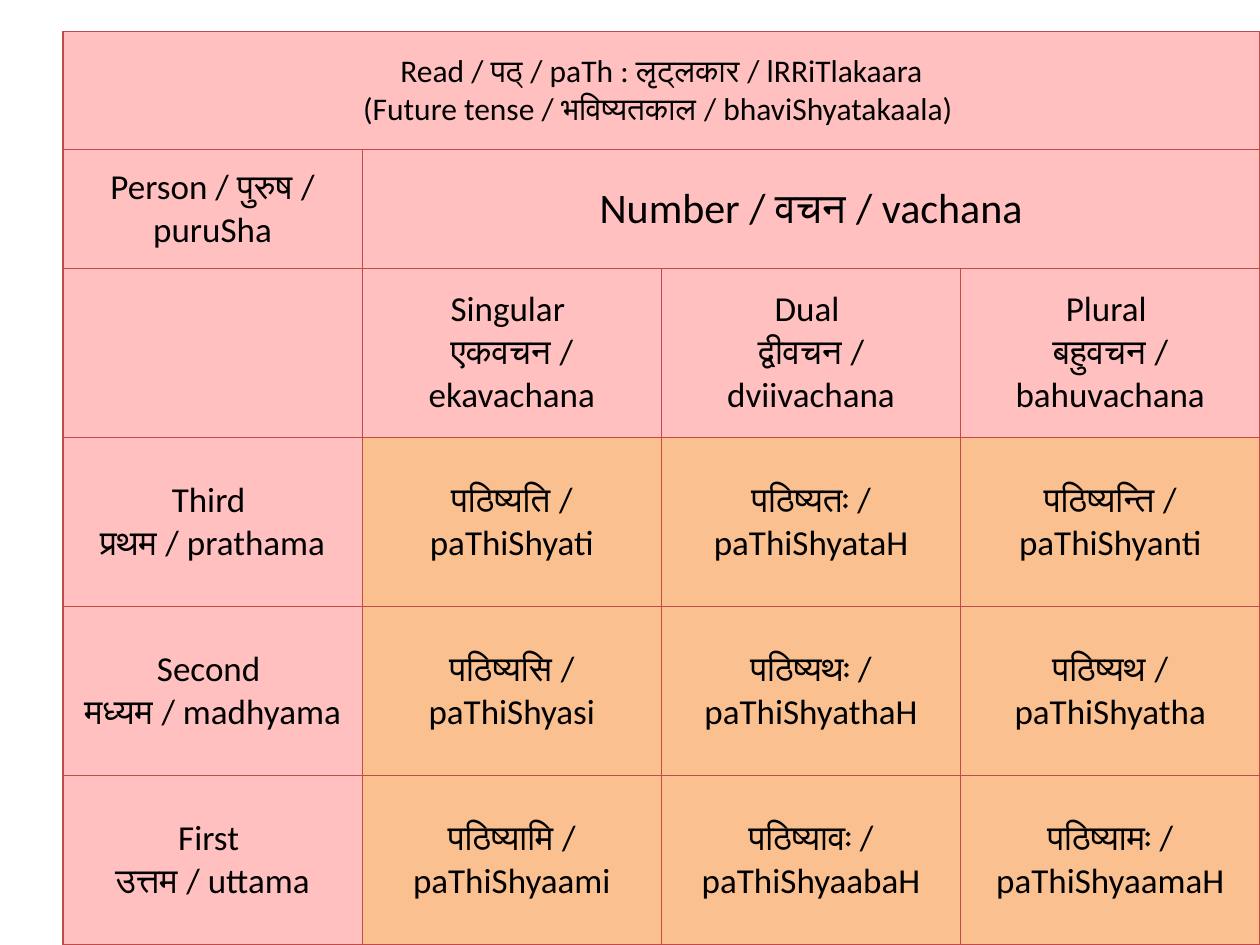
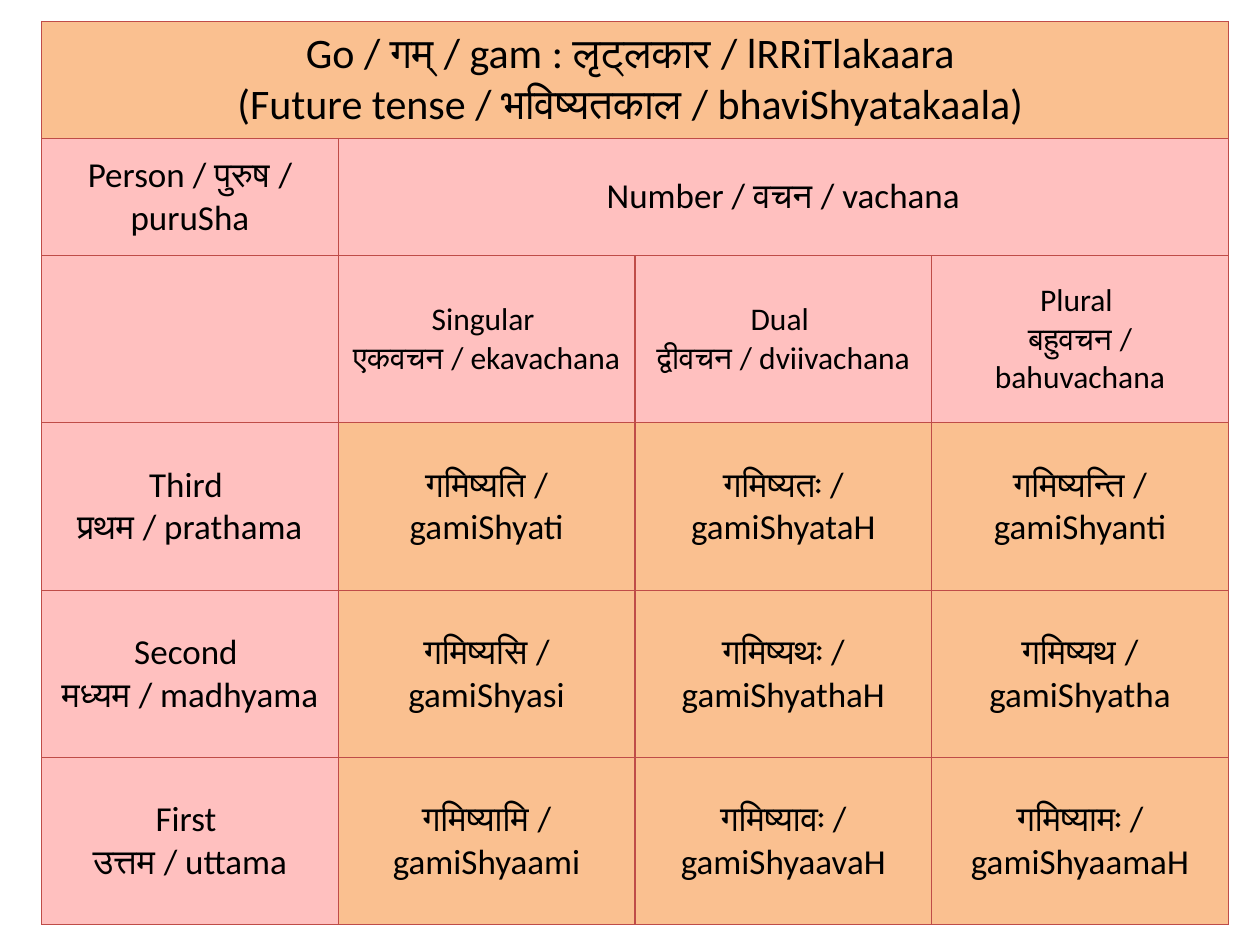
from lxml.etree import SubElement
from pptx import Presentation
from pptx.dml.color import RGBColor as Rgb
from pptx.enum.text import MSO_ANCHOR as Anchor, PP_ALIGN as Align
from pptx.oxml.ns import qn
from pptx.util import Inches, Pt

COLOURS = {"heading": "FFC0BF", "form": "FAC090", "border": "BF4C48", "text": "000000"}
FONT = "Calibri"
BORDER_WIDTH = Pt(0.75)
ROW_UNITS = [7, 7, 10, 10, 10, 10]
COLUMN_COUNT = 4

TENSE = "(Future tense / भविष्यतकाल / bhaviShyatakaala) "
PERSON = "Person / पुरुष / puruSha"
NUMBER = "Number / वचन / vachana"
NUMBERS = ["Singular \nएकवचन / ekavachana", "Dual \nद्वीवचन / dviivachana", "Plural \nबहुवचन / bahuvachana"]
PERSONS = ["Third \nप्रथम / prathama", "Second \nमध्यम / madhyama", "First \nउत्तम / uttama"]

VERBS = [
    {
        "title": "Read / पठ् / paTh : लृट्लकार / lRRiTlakaara\n" + TENSE,
        "title_fill": "heading",
        "box": (0.5, 0.25, 9.5, 7.25),
        "sizes": {"title": 18, "number": 24, "numbers": 20},
        "forms": [
            ["पठिष्यति / paThiShyati", "पठिष्यतः / paThiShyataH", "पठिष्यन्ति / paThiShyanti"],
            ["पठिष्यसि / paThiShyasi", "पठिष्यथः / paThiShyathaH", "पठिष्यथ / paThiShyatha"],
            ["पठिष्यामि / paThiShyaami", "पठिष्यावः / paThiShyaabaH", "पठिष्यामः / paThiShyaamaH"],
        ],
    },
    {
        "title": "Go / गम् / gam : लृट्लकार / lRRiTlakaara \n" + TENSE,
        "title_fill": "form",
        "box": (0.33, 0.17, 9.42, 7.17),
        "sizes": {"title": 24, "number": 20, "numbers": 18},
        "forms": [
            ["गमिष्यति / gamiShyati", "गमिष्यतः / gamiShyataH", "गमिष्यन्ति / gamiShyanti"],
            ["गमिष्यसि / gamiShyasi", "गमिष्यथः / gamiShyathaH", "गमिष्यथ / gamiShyatha"],
            ["गमिष्यामि / gamiShyaami", "गमिष्यावः / gamiShyaavaH", "गमिष्यामः / gamiShyaamaH"],
        ],
    },
]
BODY_SIZE = 20
CELL_FORMAT = {
    "vertical_anchor": Anchor.MIDDLE,
    "margin_left": Inches(0.08), "margin_right": Inches(0.08),
    "margin_top": Inches(0.04), "margin_bottom": Inches(0.04),
}


def set_format(target, values):
    for attribute, value in values.items():
        setattr(target, attribute, value)


def add_borders(cell):
    properties = cell._tc.get_or_add_tcPr()
    for side in ("lnL", "lnR", "lnT", "lnB"):
        line = SubElement(properties, qn(f"a:{side}"), w=str(BORDER_WIDTH))
        SubElement(SubElement(line, qn("a:solidFill")), qn("a:srgbClr"), val=COLOURS["border"])


def fill_cell(cell, text, size, fill):
    add_borders(cell)
    set_format(cell, CELL_FORMAT)
    cell.fill.solid()
    cell.fill.fore_color.rgb = Rgb.from_string(COLOURS[fill])
    paragraph = cell.text_frame.paragraphs[0]
    paragraph.text = text
    paragraph.alignment = Align.CENTER
    for run in paragraph.runs:
        set_format(run.font, {"name": FONT, "size": Pt(size), "bold": False})
        run.font.color.rgb = Rgb.from_string(COLOURS["text"])


def conjugation_rows(verb):
    """Return the rows of the table as (text, size, fill) triples."""
    sizes = verb["sizes"]
    blank = ("", BODY_SIZE, "heading")
    rows = [
        [(verb["title"], sizes["title"], verb["title_fill"])] + [("", BODY_SIZE, verb["title_fill"])] * 3,
        [(PERSON, BODY_SIZE, "heading"), (NUMBER, sizes["number"], "heading"), blank, blank],
        [blank] + [(number, sizes["numbers"], "heading") for number in NUMBERS],
    ]
    for person, forms in zip(PERSONS, verb["forms"]):
        rows.append([(person, BODY_SIZE, "heading")] + [(form, BODY_SIZE, "form") for form in forms])
    return rows


def add_conjugation(slide, verb):
    left, top, width, height = map(Inches, verb["box"])
    table = slide.shapes.add_table(len(ROW_UNITS), COLUMN_COUNT, left, top, width, height).table
    set_format(table, {"first_row": False, "horz_banding": False})
    for column in table.columns:
        column.width = width // COLUMN_COUNT
    for row, units in zip(table.rows, ROW_UNITS):
        row.height = height * units // sum(ROW_UNITS)
    for r, row in enumerate(conjugation_rows(verb)):
        for c, content in enumerate(row):
            fill_cell(table.cell(r, c), *content)
    last = COLUMN_COUNT - 1
    for r, first in enumerate((0, 1)):
        table.cell(r, first).merge(table.cell(r, last))


def main():
    deck = Presentation()
    set_format(deck, {"slide_width": Inches(10), "slide_height": Inches(7.5)})
    for verb in VERBS:
        add_conjugation(deck.slides.add_slide(deck.slide_layouts[6]), verb)
    deck.save("out.pptx")


if __name__ == "__main__":
    main()
